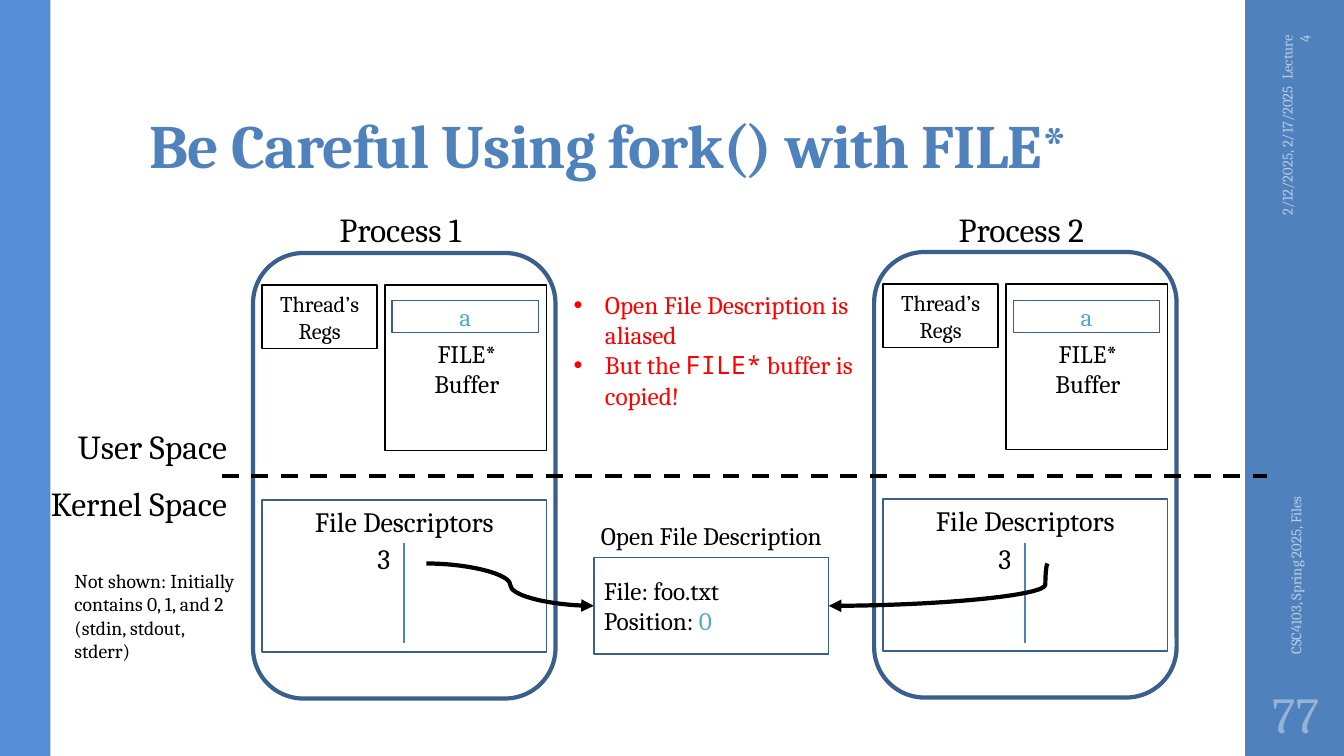
from lxml.etree import SubElement
from pptx import Presentation
from pptx.dml.color import RGBColor
from pptx.enum.dml import MSO_LINE
from pptx.enum.shapes import MSO_CONNECTOR, MSO_SHAPE
from pptx.enum.text import MSO_ANCHOR, MSO_AUTO_SIZE, PP_ALIGN
from pptx.oxml.ns import qn
from pptx.util import Pt

SCALE = 9144
BLACK = RGBColor(0x00, 0x00, 0x00)
WHITE = RGBColor(0xFF, 0xFF, 0xFF)
RED = RGBColor(0xFF, 0x00, 0x00)
BLUE = RGBColor(0x4F, 0x81, 0xBD)
SKY = RGBColor(0x55, 0x8E, 0xD5)
NAVY = RGBColor(0x3A, 0x5F, 0x8C)
TEAL = RGBColor(0x4B, 0xAC, 0xC6)
PALE = RGBColor(0xB9, 0xCD, 0xE5)
MIST = RGBColor(0x95, 0xB3, 0xD7)
LEFT, MID, RIGHT = PP_ALIGN.LEFT, PP_ALIGN.CENTER, PP_ALIGN.RIGHT
TOP, HALF, LOW = MSO_ANCHOR.TOP, MSO_ANCHOR.MIDDLE, MSO_ANCHOR.BOTTOM
INSET = (10, 5, 10, 5)


def px(*nums):
    """Turn whole px into EMU."""
    return [round(num * SCALE) for num in nums]


def apply(item, vals):
    """Set each named value on an item."""
    for name, val in vals.items():
        setattr(item, name, val)


def write(shape, lines, size, color=BLACK, align=LEFT, anchor=TOP,
          wrap=True, inset=INSET, bold=False):
    """Fill a shape with lines made of (text, color, font) runs."""
    frame = shape.text_frame
    fit = MSO_AUTO_SIZE.NONE if wrap else MSO_AUTO_SIZE.SHAPE_TO_FIT_TEXT
    sides = ("margin_left", "margin_top", "margin_right", "margin_bottom")
    apply(frame, {"word_wrap": wrap, "auto_size": fit,
                  "vertical_anchor": anchor, **dict(zip(sides, px(*inset)))})
    for spot, line in enumerate(lines):
        para = frame.add_paragraph() if spot else frame.paragraphs[0]
        apply(para, {"alignment": align, "space_before": Pt(0)})
        runs = [(line,)] if isinstance(line, str) else line
        for text, *look in runs:
            hue, face = (look + [color, "Cambria"][len(look):])
            run = para.add_run()
            run.text = text
            apply(run.font, {"size": Pt(size), "name": face, "bold": bold})
            run.font.color.rgb = hue


def label(slide, at, text, size, turn=0, **look):
    """Add a text box."""
    box = slide.shapes.add_textbox(*px(*at))
    box.rotation = turn
    write(box, [text], size, **look)


def block(slide, at, fill=WHITE, edge=None, width=1.1, kind=MSO_SHAPE.RECTANGLE):
    """Add a flat shape."""
    shape = slide.shapes.add_shape(kind, *px(*at))
    shape.shadow.inherit = False
    shape.fill.solid()
    shape.fill.fore_color.rgb = fill
    if edge is None:
        shape.line.fill.background()
    else:
        shape.line.color.rgb = edge
        shape.line.width = Pt(width)
    return shape


def wire(slide, ends, color=BLACK, width=3, dash=None, bend=None):
    """Add a line, or a curved arrow when a bend is given."""
    kind = MSO_CONNECTOR.STRAIGHT if bend is None else MSO_CONNECTOR.CURVE
    link = slide.shapes.add_connector(kind, *px(*ends))
    link.line.color.rgb = color
    apply(link.line, {"width": Pt(width), "dash_style": dash})
    props = link.element.spPr
    if bend is not None:
        SubElement(props.find(qn("a:ln")), qn("a:tailEnd"), type="triangle")
        geom = props.find(qn("a:prstGeom"))
        guides = geom.find(qn("a:avLst"))
        if guides is None:
            guides = SubElement(geom, qn("a:avLst"))
        SubElement(guides, qn("a:gd"), name="adj1", fmla=f"val {bend}")
    SubElement(props, qn("a:effectLst"))


def process(slide, num, x, y):
    """Draw one process with its registers, buffer and descriptors."""
    block(slide, (x, y, 300, 442), edge=NAVY, width=3,
          kind=MSO_SHAPE.ROUNDED_RECTANGLE)
    label(slide, (x + 72, 202, 148, 50), f"Process {num}", 24,
          align=MID, wrap=False)
    block(slide, (x + 131, y + 32, 160, 164), edge=BLACK)
    regs = block(slide, (x + 9, y + 32, 114, 63), edge=BLACK)
    write(regs, ["Thread’s Regs"], 16, align=MID, anchor=HALF)
    byte = block(slide, (x + 138, 298, 145, 32), edge=NAVY)
    write(byte, ["a"], 18, TEAL, MID, HALF)
    label(slide, (x + 141, 331, 142, 70), "FILE* Buffer", 18,
          align=MID, inset=(20, 5, 20, 5))
    table = block(slide, (x + 9, y + 245, 282, 151), edge=NAVY)
    write(table, ["File Descriptors"], 20, align=MID)
    wire(slide, (x + 150, 539, x + 150, 638), BLUE, 1.5)
    label(slide, (x + 112, 532, 34, 44), "3", 20, align=RIGHT, wrap=False)


def place(shape, at):
    """Move and size a placeholder."""
    apply(shape, dict(zip(("left", "top", "width", "height"), px(*at))))


def heads(slide):
    """Fill the title and the list."""
    title, notes = slide.placeholders
    place(title, (138, 32, 1060, 153))
    write(title, ["Be Careful Using fork() with FILE*"], 44, BLUE,
          anchor=LOW, inset=(10, 3, 10, 5), bold=True)
    para = title.text_frame.paragraphs[0]
    para.line_spacing = 0.9
    para.runs[0].font._element.set("spc", "-50")
    place(notes, (559, 282, 306, 131))
    write(notes, ["Open File Description is aliased",
                  [("But the ",), ("FILE*", RED, "Noto Sans Mono"),
                   (" buffer is copied!",)]], 18, RED)
    dent = px(31)[0]
    for para in notes.text_frame.paragraphs:
        props = para._p.get_or_add_pPr()
        props.set("marL", str(dent))
        props.set("indent", str(-dent))
        SubElement(props, qn("a:buFont"), typeface="Arial")
        SubElement(props, qn("a:buChar"), char="•")


def frame(slide):
    """Draw the side bars and their small print."""
    block(slide, (1235, 0, 100, 750), BLUE)
    block(slide, (0, 0, 50, 750), SKY)
    label(slide, (1181, 109, 208, 40), "2/12/2025, 2/17/2025  Lecture 4", 10.5,
          270, color=PALE, align=RIGHT, anchor=HALF)
    label(slide, (1089, 443, 392, 40), "CSC4103, Spring 2025, Files", 10.5,
          270, color=PALE, anchor=HALF)
    label(slide, (1235, 675, 100, 65), "77", 36, color=MIST, align=MID,
          anchor=HALF, inset=(5, 5, 5, 5))


def main():
    """Build the slide."""
    deck = Presentation()
    deck.slide_width, deck.slide_height = px(1333, 750)
    slide = deck.slides.add_slide(deck.slide_layouts[1])
    frame(slide)
    heads(slide)
    process(slide, 1, 251, 251)
    process(slide, 2, 867, 250)
    label(slide, (64, 418, 171, 50), "User Space", 24, align=RIGHT, wrap=False)
    label(slide, (39, 474, 196, 50), "Kernel Space", 24, align=RIGHT, wrap=False)
    label(slide, (64, 559, 184, 104),
          "Not shown: Initially contains 0, 1, and 2 (stdin, stdout, stderr)", 14)
    label(slide, (585, 511, 241, 40), "Open File Description", 18,
          align=MID, wrap=False)
    entry = block(slide, (589, 553, 233, 96), edge=NAVY)
    write(entry, ["File: foo.txt", [("Position: ",), ("0", TEAL)]], 18,
          anchor=HALF)
    wire(slide, (423, 559, 589, 601), bend=50000)
    wire(slide, (1039, 559, 822, 601), bend=1000)
    wire(slide, (220, 472, 1257, 472), dash=MSO_LINE.DASH)
    deck.save("out.pptx")


if __name__ == "__main__":
    main()
